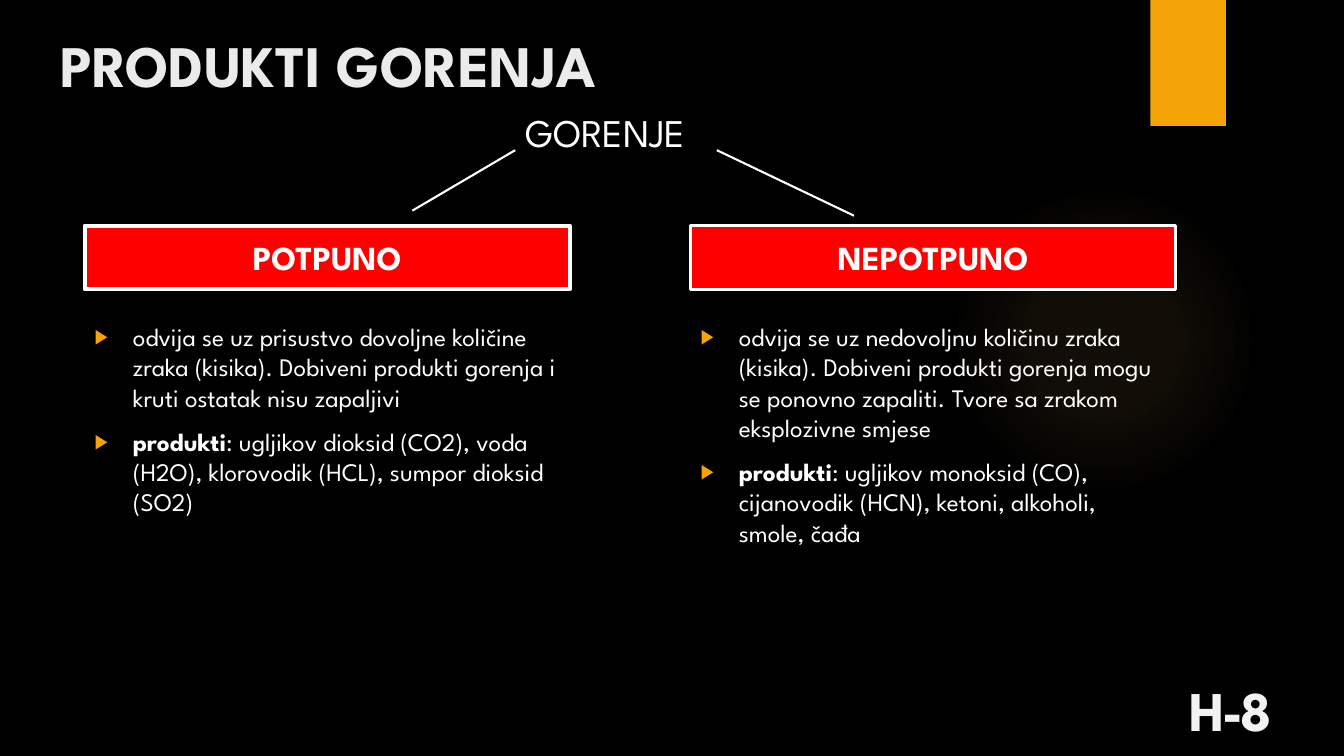
from lxml import etree
from pptx import Presentation
from pptx.dml.color import RGBColor
from pptx.enum.shapes import MSO_CONNECTOR, MSO_SHAPE
from pptx.enum.text import MSO_ANCHOR, PP_ALIGN
from pptx.oxml import parse_xml
from pptx.oxml.ns import nsdecls, qn
from pptx.util import Inches, Pt

FONT = "League Spartan"
COLORS = {
    "background": "000000",
    "title": "EBEBEB",
    "text": "FFFFFF",
    "code": "F2F2F2",
    "accent": "F5A408",
    "glow": "FAC96A",
    "header": "FF0000",
}
COLUMN_TOP, COLUMN_WIDTH = 2.24, 4.81
HEADER_HEIGHT, BODY_OFFSET, BODY_HEIGHT = 0.63, 0.9, 4.09
BULLET_INDENT = 0.38
COLUMNS = [
    (0.84, "POTPUNO", 3, [
        [("odvija se uz prisustvo dovoljne količine zraka (kisika). Dobiveni produkti "
          "gorenja i kruti ostatak nisu zapaljivi", False)],
        [("produkti", True),
         (": ugljikov dioksid (CO2), voda (H2O), klorovodik (HCL), sumpor dioksid (SO2)", False)],
    ]),
    (6.85, "NEPOTPUNO", 2.25, [
        [("odvija se uz nedovoljnu količinu zraka (kisika). Dobiveni produkti gorenja mogu "
          "se ponovno zapaliti. Tvore sa zrakom eksplozivne smjese", False)],
        [("produkti", True),
         (": ugljikov monoksid (CO), cijanovodik (HCN), ketoni, alkoholi, smole, čađa", False)],
    ]),
]
BRANCHES = [((7.11, 1.49), (8.47, 2.14)), ((5.11, 1.49), (4.09, 2.09))]


def color(name):
    return RGBColor.from_string(COLORS[name])


def add_run(paragraph, text, size, color_name="text", bold=False):
    run = paragraph.add_run()
    run.text = text
    formats = {"name": FONT, "size": Pt(size), "bold": bold}
    for attribute, value in formats.items():
        setattr(run.font, attribute, value)
    run.font.color.rgb = color(color_name)
    return run


def add_text_box(slide, box, wrap=True):
    frame = slide.shapes.add_textbox(*map(Inches, box)).text_frame
    frame.word_wrap = wrap
    return frame


def add_shape(slide, preset, box, fill):
    shape = slide.shapes.add_shape(preset, *map(Inches, box))
    shape.shadow.inherit = False
    shape.fill.solid()
    shape.fill.fore_color.rgb = color(fill)
    shape.line.fill.background()
    return shape


def add_glow(slide, box):
    """Place a faint circular gradient that fades out towards its edge."""
    glow = add_shape(slide, MSO_SHAPE.OVAL, box, "glow")
    stops = "".join(
        f'<a:gs pos="{position * 1000}"><a:srgbClr val="{COLORS["glow"]}">'
        f'<a:alpha val="{opacity * 1000}"/></a:srgbClr></a:gs>'
        for position, opacity in [(0, 7), (36, 6), (69, 0)])
    gradient = parse_xml(
        f'<a:gradFill {nsdecls("a")}><a:gsLst>{stops}</a:gsLst><a:path path="circle">'
        '<a:fillToRect l="50000" t="50000" r="50000" b="50000"/></a:path></a:gradFill>')
    properties = glow._element.spPr
    properties.replace(properties.find(qn("a:solidFill")), gradient)


def add_ribbon(slide, box):
    ribbon = add_shape(slide, MSO_SHAPE.RECTANGLE, box, "accent")
    effects = ribbon._element.spPr.find(qn("a:effectLst"))
    effects.append(parse_xml(
        f'<a:outerShdw {nsdecls("a")} blurRad="{Pt(3)}" dist="{Pt(2)}" dir="5400000" '
        f'rotWithShape="0"><a:srgbClr val="{COLORS["background"]}">'
        '<a:alpha val="45000"/></a:srgbClr></a:outerShdw>'))


def add_bullet(paragraph):
    properties = paragraph._p.get_or_add_pPr()
    properties.set("marL", str(Inches(BULLET_INDENT)))
    properties.set("indent", str(-Inches(BULLET_INDENT)))
    bullet_color = etree.SubElement(properties, qn("a:buClr"))
    etree.SubElement(bullet_color, qn("a:srgbClr"), val=COLORS["accent"])
    etree.SubElement(properties, qn("a:buSzPct"), val="80000")
    etree.SubElement(properties, qn("a:buFont"), typeface="Arial")
    etree.SubElement(properties, qn("a:buChar"), char="▶")


def add_column(slide, left, top, width, heading, border, items):
    """Place a framed heading with its bullet list below."""
    header = add_shape(slide, MSO_SHAPE.RECTANGLE, (left, top, width, HEADER_HEIGHT), "header")
    header.line.color.rgb = color("text")
    header.line.width = Pt(border)
    header.text_frame.vertical_anchor = MSO_ANCHOR.MIDDLE
    paragraph = header.text_frame.paragraphs[0]
    paragraph.alignment = PP_ALIGN.CENTER
    add_run(paragraph, heading, 24, bold=True)

    frame = add_text_box(slide, (left, top + BODY_OFFSET, width, BODY_HEIGHT))
    for index, item in enumerate(items):
        paragraph = frame.add_paragraph() if index else frame.paragraphs[0]
        if index:
            paragraph.space_before = Pt(10)
        add_bullet(paragraph)
        for text, bold in item:
            add_run(paragraph, text, 18, bold=bold)


def add_branch(slide, start, end):
    branch = slide.shapes.add_connector(MSO_CONNECTOR.STRAIGHT, *map(Inches, start + end))
    branch.line.color.rgb = color("text")
    branch.line.width = Pt(1.5)
    etree.SubElement(branch._element.spPr, qn("a:effectLst"))


def add_slide_code(slide, box):
    frame = add_text_box(slide, box, wrap=False)
    run = add_run(frame.paragraphs[0], "H-8", 40, "code", bold=True)
    run.font._element.set("spc", "-200")


def build_slide(presentation):
    slide = presentation.slides.add_slide(presentation.slide_layouts[6])
    slide.background.fill.solid()
    slide.background.fill.fore_color.rgb = color("background")
    add_glow(slide, (9.41, 1.83, 3.08, 3.08))
    add_ribbon(slide, (11.41, 0, 0.75, 1.25))
    title = add_text_box(slide, (0.5, 0.24, 10.29, 0.94))
    add_run(title.paragraphs[0], "PRODUKTI GORENJA", 42, "title", bold=True)
    for left, heading, border, items in COLUMNS:
        add_column(slide, left, COLUMN_TOP, COLUMN_WIDTH, heading, border, items)
    root = add_text_box(slide, (5.11, 1.03, 4.58, 0.57))
    add_run(root.paragraphs[0], "GORENJE", 28)
    for start, end in BRANCHES:
        add_branch(slide, start, end)
    add_slide_code(slide, (11.7, 6.65, 1.43, 0.71))


def main():
    presentation = Presentation()
    presentation.slide_width = Inches(13.33)
    presentation.slide_height = Inches(7.5)
    build_slide(presentation)
    presentation.save("out.pptx")


if __name__ == "__main__":
    main()
